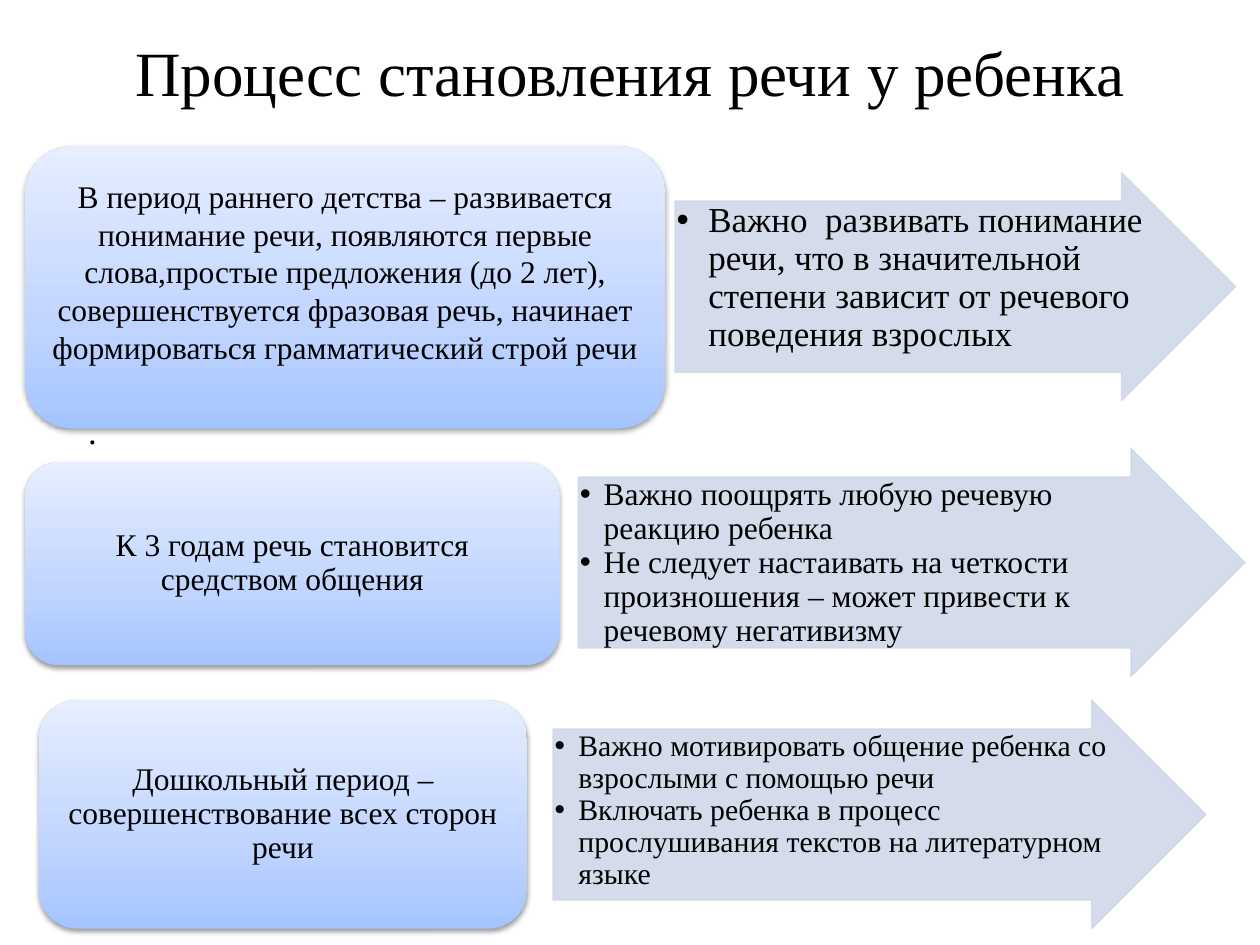
from lxml import etree
from pptx import Presentation
from pptx.dml.color import RGBColor
from pptx.enum.shapes import MSO_SHAPE as Preset
from pptx.enum.text import MSO_ANCHOR as Anchor, PP_ALIGN as Align
from pptx.oxml.ns import qn
from pptx.util import Cm, Pt

FONT = "Times New Roman"
BLACK, ARROW_COLOR, ARROW_OPACITY = "000000", "D0D8E8", 90
GRADIENT = [(0, "A4C4FF"), (35, "BFD4FF"), (100, "E6EEFF")]
ARROW_HEIGHT = 4.6

TITLE = "Процесс становления речи у ребенка"
STAGES = [
    {
        "box": (0.51, 2.95, 12.9, 5.69), "spacing": 1.0, "bottom_inset": 0.75,
        "stage": "В период раннего детства – развивается понимание речи, появляются "
                 "первые слова,простые предложения (до 2 лет), совершенствуется "
                 "фразовая речь, начинает формироваться грамматический строй речи",
        "arrow": (13.61, 3.48, 11.3), "size": 20, "indent": 0.64,
        "advice": ["Важно  развивать понимание речи, что в значительной степени "
                   "зависит от речевого поведения взрослых"],
    },
    {
        "box": (0.51, 9.32, 10.77, 4.09), "spacing": 0.9, "bottom_inset": 0.1,
        "stage": "К 3 годам речь становится средством общения",
        "arrow": (11.66, 9.04, 13.44), "size": 18, "indent": 0.48,
        "advice": ["Важно поощрять любую речевую реакцию ребенка",
                   "Не следует настаивать на четкости произношения – может "
                   "привести к речевому негативизму"],
    },
    {
        "box": (0.79, 14.12, 9.83, 4.6), "spacing": 0.9, "bottom_inset": 0.1,
        "stage": "Дошкольный период – совершенствование всех сторон речи",
        "arrow": (11.15, 14.12, 13.16), "size": 17, "indent": 0.48,
        "advice": ["Важно мотивировать общение ребенка со взрослыми с помощью речи",
                   "Включать ребенка в процесс прослушивания текстов на "
                   "литературном языке"],
    },
]


def rgb(color):
    return RGBColor.from_string(color)


def add_child(parent, tag, **attributes):
    child = etree.SubElement(parent, qn(tag))
    for name, value in attributes.items():
        child.set(name, str(value))
    return child


def add_color(parent, color, opacity=None):
    element = add_child(parent, "a:srgbClr", val=color)
    if opacity is not None:
        add_child(element, "a:alpha", val=opacity * 1000)


def set_insets(frame, left, top, right, bottom):
    frame.margin_left, frame.margin_top = Cm(left), Cm(top)
    frame.margin_right, frame.margin_bottom = Cm(right), Cm(bottom)


def write(frame, texts, size, align=Align.LEFT, spacing=1.0):
    frame.word_wrap = True
    for number, text in enumerate(texts):
        paragraph = frame.add_paragraph() if number else frame.paragraphs[0]
        paragraph.text = text
        paragraph.alignment = align
        paragraph.line_spacing = spacing
        paragraph.space_before = paragraph.space_after = Pt(0)
        paragraph.font.name, paragraph.font.size = FONT, Pt(size)
        paragraph.font.color.rgb = rgb(BLACK)


def hang(paragraph, left, first):
    properties = paragraph._p.get_or_add_pPr()
    properties.set("marL", str(Cm(left)))
    properties.set("indent", str(Cm(first)))
    return properties


def add_text(slide, place, text, size, align=Align.LEFT, anchor=Anchor.TOP):
    frame = slide.shapes.add_textbox(*map(Cm, place)).text_frame
    write(frame, [text], size, align)
    frame.vertical_anchor = anchor
    return frame


def add_arrow(slide, place, texts, size, indent):
    shape = slide.shapes.add_shape(Preset.RIGHT_ARROW, *map(Cm, (*place, ARROW_HEIGHT)))
    shape.adjustments[0], shape.adjustments[1] = 0.75, 0.5
    shape.shadow.inherit = False
    shape.fill.solid()
    shape.fill.fore_color.rgb = shape.line.color.rgb = rgb(ARROW_COLOR)
    shape.line.width = Pt(0.75)
    for color in shape._element.spPr.iter(qn("a:srgbClr")):
        add_child(color, "a:alpha", val=ARROW_OPACITY * 1000)

    frame = shape.text_frame
    frame.vertical_anchor = Anchor.TOP
    set_insets(frame, 0.03, 0.03, 0.03, 0.03)
    write(frame, texts, size, spacing=0.9)
    for paragraph in frame.paragraphs:
        paragraph.level = 1
        properties = hang(paragraph, indent, -indent)
        add_color(add_child(properties, "a:buClr"), BLACK)
        add_child(properties, "a:buFont", typeface="Arial")
        add_child(properties, "a:buChar", char="•")
        # Bullet elements must come before the default run properties.
        properties.append(properties.find(qn("a:defRPr")))


def add_stage_box(slide, place, text, spacing, bottom_inset):
    shape = slide.shapes.add_shape(Preset.ROUNDED_RECTANGLE, *map(Cm, place))
    shape.line.fill.background()
    shape.shadow.inherit = False
    properties = shape._element.spPr

    gradient = etree.Element(qn("a:gradFill"), rotWithShape="1")
    stops = add_child(gradient, "a:gsLst")
    for position, color in GRADIENT:
        add_color(add_child(stops, "a:gs", pos=position * 1000), color)
    add_child(gradient, "a:lin", ang=270 * 60000, scaled=0)
    properties.find(qn("a:prstGeom")).addnext(gradient)

    shadow = add_child(properties.find(qn("a:effectLst")), "a:outerShdw",
                       blurRad=Pt(3.1), dist=Pt(1.6), dir=90 * 60000, rotWithShape=0)
    add_color(shadow, BLACK, 38)

    frame = shape.text_frame
    frame.vertical_anchor = Anchor.MIDDLE
    set_insets(frame, 0.2, 0.1, 0.2, bottom_inset)
    write(frame, [text], 18, Align.CENTER, spacing)


def main():
    presentation = Presentation()
    presentation.slide_width, presentation.slide_height = Cm(25.4), Cm(19.05)
    slide = presentation.slides.add_slide(presentation.slide_layouts[6])

    add_text(slide, (1.27, 0.53, 22.86, 1.8), TITLE, 36, Align.CENTER, Anchor.MIDDLE)
    dot = add_text(slide, (1.5, 8.13, 22.86, 13.69), ".", 20)
    hang(dot.paragraphs[0], 0.97, -0.94)
    for stage in STAGES:
        add_arrow(slide, stage["arrow"], stage["advice"], stage["size"], stage["indent"])
        add_stage_box(slide, stage["box"], stage["stage"], stage["spacing"],
                      stage["bottom_inset"])
    presentation.save("out.pptx")


if __name__ == "__main__":
    main()
